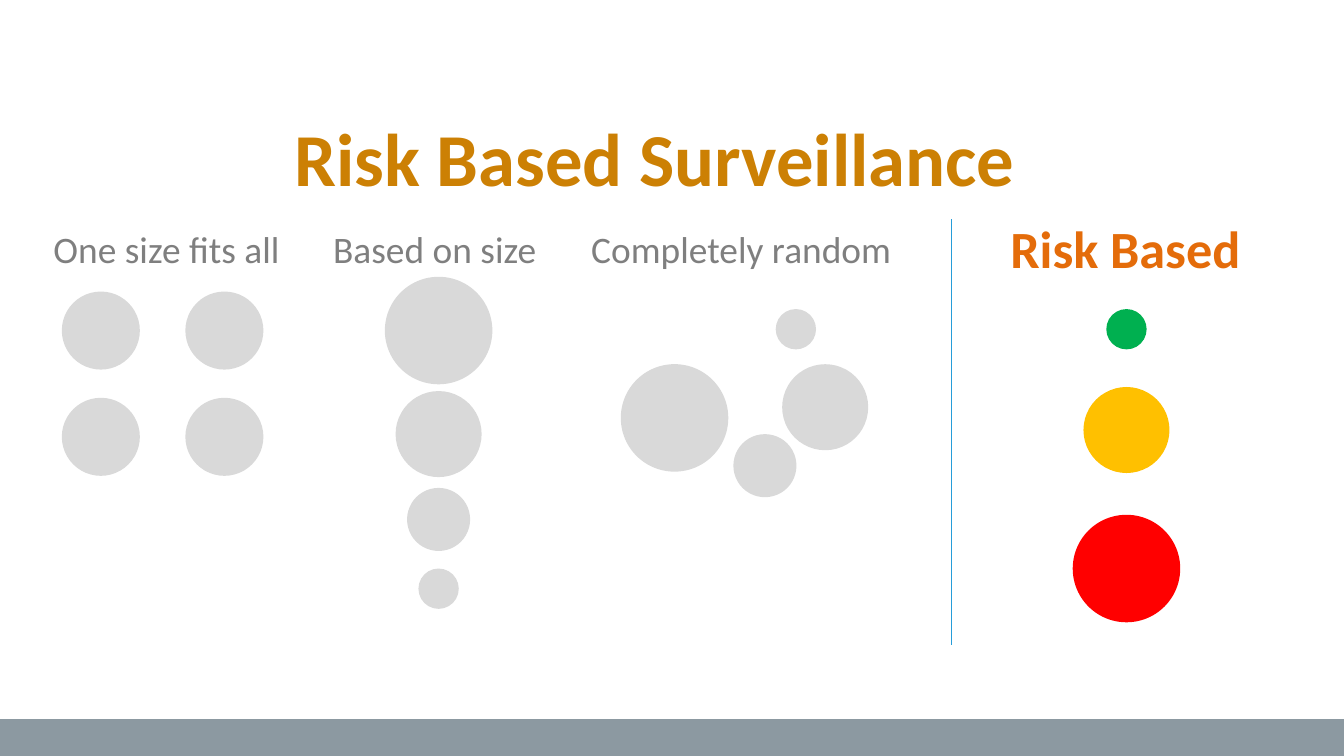
from itertools import product

from lxml.etree import SubElement
from pptx import Presentation
from pptx.dml.color import RGBColor
from pptx.enum.shapes import MSO_CONNECTOR, MSO_SHAPE
from pptx.enum.text import MSO_ANCHOR, PP_ALIGN
from pptx.oxml.ns import qn
from pptx.util import Pt

GREY, LABEL = "D9D9D9", "7F7F7F"
TINY, SMALL, EVEN, MEDIUM, LARGE = 21.6, 33.8, 41.8, 46.1, 57.6
FRAME = dict(word_wrap=True, vertical_anchor=MSO_ANCHOR.TOP,
             margin_left=Pt(7.2), margin_right=Pt(0),
             margin_top=Pt(3.6), margin_bottom=Pt(3.6))


def rgb(value):
    """Turn a hex string into a colour."""
    return RGBColor.from_string(value)


def set_all(target, values):
    """Set every attribute in a dict of format values."""
    for name, value in values.items():
        setattr(target, name, value)


def write(sp, text, size, color, bold=False):
    """Fill a text shape with one left-aligned line."""
    tf = sp.text_frame
    set_all(tf, FRAME)
    p = tf.paragraphs[0]
    p.alignment = PP_ALIGN.LEFT
    r = p.add_run()
    r.text = text
    set_all(r.font, dict(name="Calibri", size=Pt(size), bold=bold))
    r.font.color.rgb = rgb(color)


def add_title(s, text, box, size, color):
    """Place and format the title placeholder."""
    sp = s.shapes.title
    set_all(sp, dict(zip(("left", "top", "width", "height"), map(Pt, box))))
    write(sp, text, size, color, True)


def add_label(s, text, box, size, color, bold=False):
    """Add a heading above a group of circles."""
    write(s.shapes.add_textbox(*map(Pt, box)), text, size, color, bold)


def add_solid(s, kind, box, color):
    """Add a filled shape without outline or shadow."""
    sp = s.shapes.add_shape(kind, *map(Pt, box))
    sp.shadow.inherit = False
    sp.fill.solid()
    sp.fill.fore_color.rgb = rgb(color)
    sp.line.fill.background()


def add_circle(s, x, y, size, color=GREY):
    """Add a circle centred on x, y."""
    box = (x - size / 2, y - size / 2, size, size)
    add_solid(s, MSO_SHAPE.OVAL, box, color)


def add_divider(s, x, top, bottom, color):
    """Add a thin vertical line."""
    sp = s.shapes.add_connector(MSO_CONNECTOR.STRAIGHT, *map(Pt, (x, top, x, bottom)))
    sp.line.width = Pt(0.75)
    sp.line.color.rgb = rgb(color)
    SubElement(sp._element.spPr, qn("a:effectLst"))


def main():
    """Build the slide and save it."""
    prs = Presentation()
    set_all(prs, dict(slide_width=Pt(720), slide_height=Pt(405)))
    s = prs.slides.add_slide(prs.slide_layouts[5])
    add_solid(s, MSO_SHAPE.RECTANGLE, (0, 385.2, 720, 19.8), "8C99A1")
    add_title(s, "Risk Based Surveillance", (150.5, 56.2, 414, 55.4), 40, "CC8004")

    for text, left, width in (("One size fits all", 21.6, 136.8),
                              ("Based on size", 171.4, 128.9),
                              ("Completely random", 309.6, 176.4)):
        add_label(s, text, (left, 117.4, width, 31.7), 20, LABEL)
    add_label(s, "Risk Based", (534.2, 112.3, 139, 41), 28, "E46C0A", True)

    for y, x in product((177.1, 234), (54, 120.2)):
        add_circle(s, x, y, EVEN)
    for y, size in ((177.1, LARGE), (232.6, MEDIUM), (278.3, SMALL), (315.4, TINY)):
        add_circle(s, 235, y, size)
    for x, y, size in ((361.4, 223.9, LARGE), (426.4, 176.4, TINY),
                       (442.1, 218.2, MEDIUM), (409.8, 249.5, SMALL)):
        add_circle(s, x, y, size)
    for y, size, color in ((176.4, TINY, "00B050"), (230.4, MEDIUM, "FFC000"),
                           (304.6, LARGE, "FF0000")):
        add_circle(s, 603.5, y, size, color)

    add_divider(s, 509.8, 117.4, 345.6, "279DD9")
    prs.save("out.pptx")


if __name__ == "__main__":
    main()
